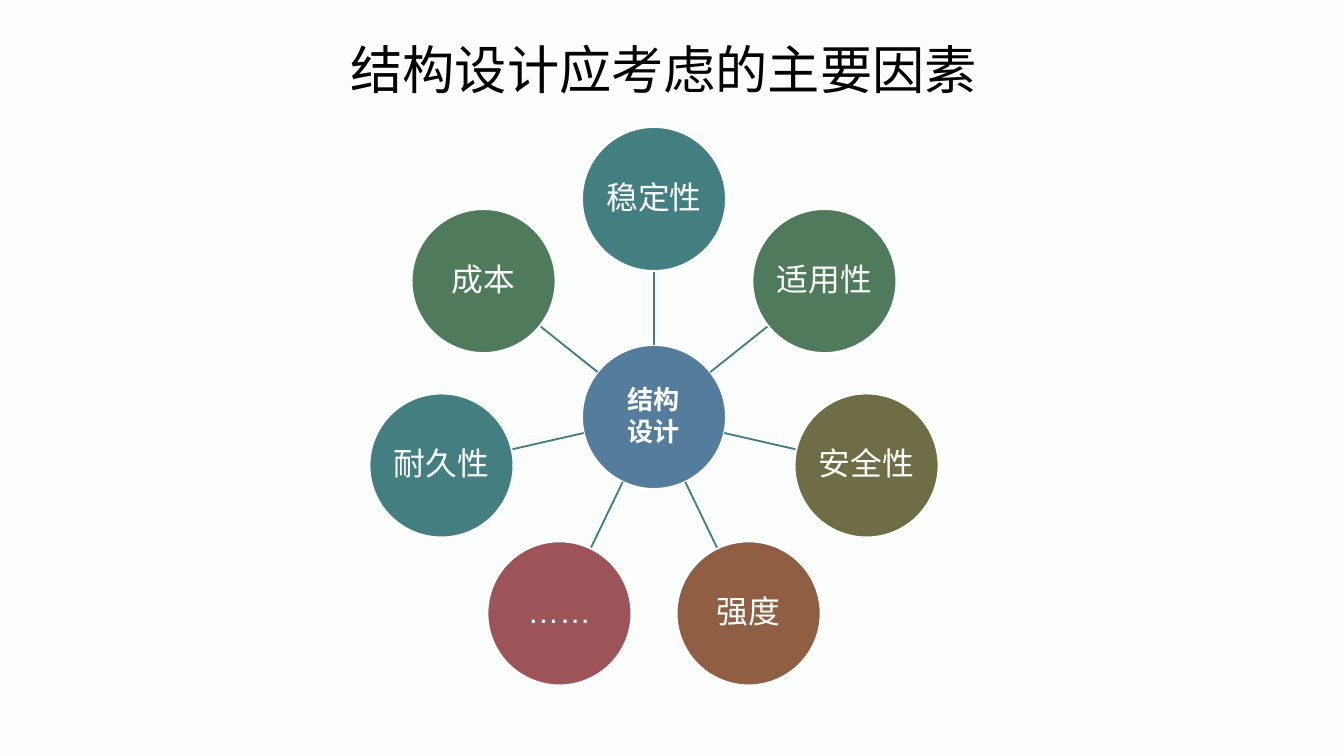
import math

import pptx
import pptx.dml.color
import pptx.enum.shapes
import pptx.enum.text
import pptx.oxml.ns
import pptx.util
from lxml import etree

RGB = pptx.dml.color.RGBColor
PAPER = RGB(0xFC, 0xFD, 0xFD)
WHITE = RGB(0xFF, 0xFF, 0xFF)
BLACK = RGB(0x00, 0x00, 0x00)
BLUE = RGB(0x54, 0x7D, 0x9D)
TEAL = RGB(0x43, 0x7F, 0x81)
GREEN = RGB(0x4F, 0x7A, 0x5C)
OLIVE = RGB(0x6E, 0x6D, 0x45)
BROWN = RGB(0x90, 0x5E, 0x43)
ROSE = RGB(0x9D, 0x54, 0x58)

FONT = "Arial"
EMU_PER_PX = 914400 / 134.4
CENTER_X, CENTER_Y = 654, 417
RADIUS = 72
ORBIT = 218

FACTORS = [
    ("稳定性", TEAL),
    ("适用性", GREEN),
    ("安全性", OLIVE),
    ("强度", BROWN),
    ("……", ROSE),
    ("耐久性", TEAL),
    ("成本", GREEN),
]


def px(n):
    return pptx.util.Emu(round(n * EMU_PER_PX))


def add_run(p, text, size, color, bold=False):
    r = p.add_run()
    r.text = text
    r.font.name = FONT
    r.font.size = pptx.util.Pt(size)
    r.font.bold = bold
    r.font.color.rgb = color


def add_title(slide, text):
    sp = slide.shapes.title
    sp.left, sp.top, sp.width, sp.height = px(337), px(30), px(784), px(77)
    tf = sp.text_frame
    tf.auto_size = pptx.enum.text.MSO_AUTO_SIZE.NONE
    tf.vertical_anchor = pptx.enum.text.MSO_ANCHOR.MIDDLE
    p = tf.paragraphs[0]
    p.alignment = pptx.enum.text.PP_ALIGN.LEFT
    add_run(p, text, 28, BLACK)


def add_circle(slide, x, y, lines, color, size, bold=False):
    sp = slide.shapes.add_shape(
        pptx.enum.shapes.MSO_SHAPE.OVAL,
        px(x - RADIUS), px(y - RADIUS), px(2 * RADIUS), px(2 * RADIUS))
    sp.shadow.inherit = False
    sp.fill.solid()
    sp.fill.fore_color.rgb = color
    sp.line.color.rgb = WHITE
    sp.line.width = pptx.util.Pt(1)
    tf = sp.text_frame
    tf.word_wrap = True
    tf.vertical_anchor = pptx.enum.text.MSO_ANCHOR.MIDDLE
    tf.margin_left = tf.margin_right = tf.margin_top = tf.margin_bottom = px(1)
    for i, text in enumerate(lines):
        p = tf.add_paragraph() if i else tf.paragraphs[0]
        p.alignment = pptx.enum.text.PP_ALIGN.CENTER
        p.line_spacing = 0.9
        p.space_before = pptx.util.Pt(2 if i else 0)
        add_run(p, text, size, WHITE, bold)


def on_ray(angle, distance):
    return (CENTER_X + distance * math.sin(angle),
            CENTER_Y - distance * math.cos(angle))


def add_spoke(slide, angle):
    x1, y1 = on_ray(angle, RADIUS)
    x2, y2 = on_ray(angle, ORBIT - RADIUS)
    line = slide.shapes.add_connector(
        pptx.enum.shapes.MSO_CONNECTOR.STRAIGHT, px(x1), px(y1), px(x2), px(y2))
    line.line.color.rgb = TEAL
    line.line.width = pptx.util.Pt(1)
    etree.SubElement(line._element.spPr, pptx.oxml.ns.qn("a:effectLst"))


def main():
    prs = pptx.Presentation()
    prs.slide_width, prs.slide_height = px(1344), px(756)
    slide = prs.slides.add_slide(prs.slide_layouts[5])
    slide.background.fill.solid()
    slide.background.fill.fore_color.rgb = PAPER

    add_title(slide, "结构设计应考虑的主要因素")
    add_circle(slide, CENTER_X, CENTER_Y, ["结构", "设计"], BLUE, 14, bold=True)
    for i, (name, color) in enumerate(FACTORS):
        angle = 2 * math.pi * i / len(FACTORS)
        add_spoke(slide, angle)
        x, y = on_ray(angle, ORBIT)
        add_circle(slide, x, y, [name], color, 17)

    prs.save("out.pptx")


if __name__ == "__main__":
    main()
